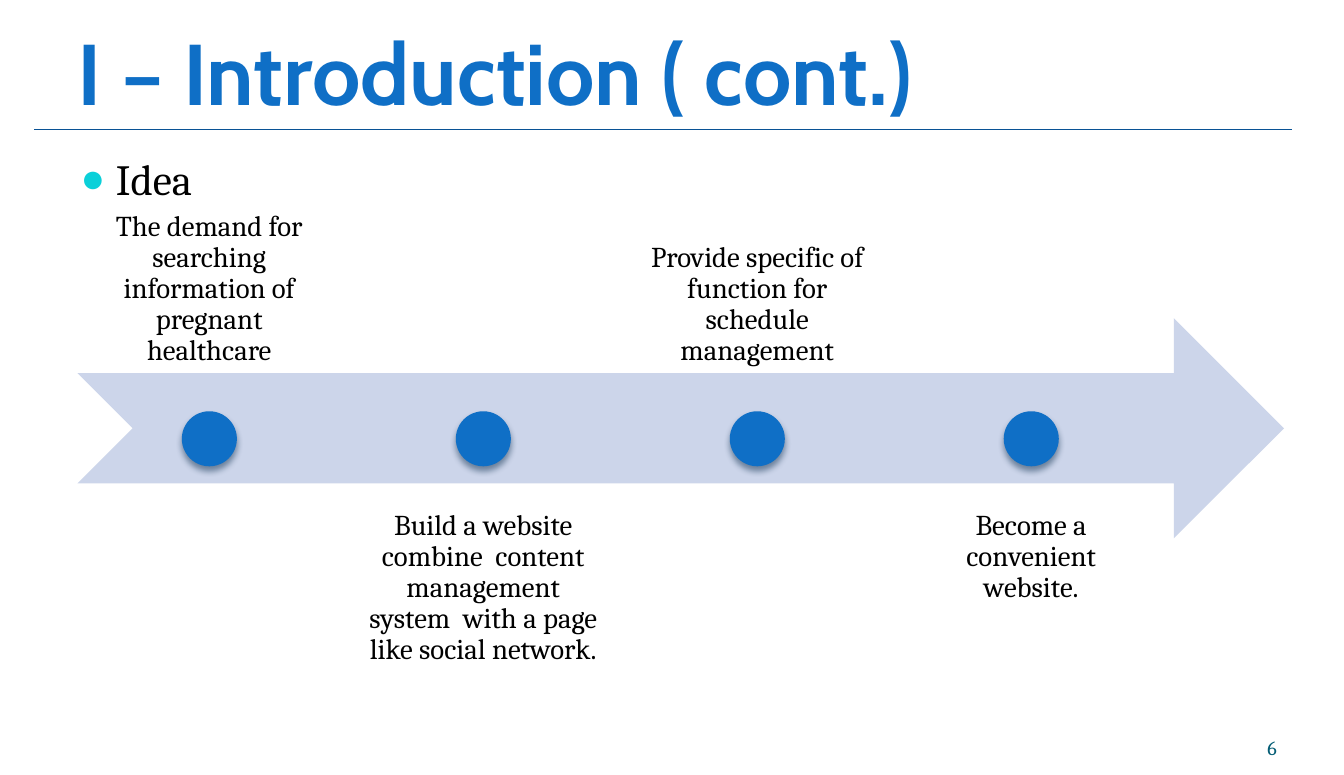
from lxml import etree
from pptx import Presentation
from pptx.dml.color import RGBColor
from pptx.enum.shapes import MSO_CONNECTOR, MSO_SHAPE
from pptx.enum.text import MSO_ANCHOR, PP_ALIGN
from pptx.oxml.ns import qn
from pptx.util import Inches, Pt

TOP, BOTTOM = MSO_ANCHOR.TOP, MSO_ANCHOR.BOTTOM
LEFT, CENTER, RIGHT = PP_ALIGN.LEFT, PP_ALIGN.CENTER, PP_ALIGN.RIGHT

TITLE = "I – Introduction ( cont.)"
TOPIC = "Idea"
PAGE_NUMBER = "6"
STEPS = [
    "The demand for searching information of pregnant healthcare",
    "Build a website combine  content management system  with a page like social network.",
    "Provide specific of function for schedule management",
    "Become a convenient website.",
]

THEME = {
    "title": {"name": "Cabin", "size": 60, "bold": True, "color": "0F6FC6"},
    "topic": {"name": "Cambria", "size": 30, "color": "000000"},
    "step": {"name": "Cambria", "size": 20, "color": "000000"},
    "number": {"name": "Cambria", "size": 14, "color": "045D75"},
    "rule": "095295",
    "bullet": "0BD0D9",
    "arrow": "CCD5EA",
    "dot": "0F6FC6",
    "shadow": "042747",
}

# Timeline grid, in inches
SLIDE_WIDTH, SLIDE_HEIGHT = 13, 7.5
ARROW_LEFT, ARROW_TOP, ARROW_WIDTH, ARROW_HEIGHT = 0.75, 3.08, 11.67, 2.13
ROW_HEIGHT = ARROW_HEIGHT
ROW_TOPS = (ARROW_TOP - 1.5, ARROW_TOP + 1.7)
COLUMN_LEFT, COLUMN_WIDTH, COLUMN_GAP = 0.76, 2.53, 0.12
DOT_SIZE = ROW_HEIGHT / 4
DOT_TOP = 3.98


def add_xml(parent, tag, **attributes):
    return etree.SubElement(
        parent, qn(tag), {key: str(value) for key, value in attributes.items()})


def add_text(page, text, area, style, align=LEFT, anchor=TOP, insets=(0, 0)):
    """Add a one-paragraph box; insets are (horizontal, vertical)."""
    box = page.shapes.add_textbox(*map(Inches, area))
    across, down = map(Inches, insets)
    frame_format = {
        "word_wrap": True, "vertical_anchor": anchor,
        "margin_left": across, "margin_right": across,
        "margin_top": down, "margin_bottom": down,
    }
    for name, value in frame_format.items():
        setattr(box.text_frame, name, value)
    para = box.text_frame.paragraphs[0]
    para.alignment = align
    span = para.add_run()
    span.text = text
    for name, value in THEME[style].items():
        if name == "color":
            span.font.color.rgb = RGBColor.from_string(value)
        else:
            setattr(span.font, name, Pt(value) if name == "size" else value)
    return para


def add_bullet(para):
    properties = para._p.get_or_add_pPr()
    properties.set("marL", str(Inches(0.34)))
    properties.set("indent", str(-Inches(0.34)))
    color = add_xml(properties, "a:buClr")
    add_xml(color, "a:srgbClr", val=THEME["bullet"])
    add_xml(properties, "a:buSzPct", val=95000)
    add_xml(properties, "a:buFont", typeface="Arial")
    add_xml(properties, "a:buChar", char="●")


def add_filled(page, preset, area, color):
    shape = page.shapes.add_shape(preset, *map(Inches, area))
    shape.shadow.inherit = False
    shape.fill.solid()
    shape.fill.fore_color.rgb = RGBColor.from_string(color)
    shape.line.fill.background()
    return shape


def add_drop_shadow(shape):
    effects = shape._element.spPr.find(qn("a:effectLst"))
    shadow = add_xml(effects, "a:outerShdw", blurRad=Pt(4.5), dist=Pt(3),
                     dir=90 * 60000, rotWithShape=0)
    color = add_xml(shadow, "a:srgbClr", val=THEME["shadow"])
    add_xml(color, "a:alpha", val=48000)


def add_header(page):
    add_text(page, TITLE, (0.75, 0, 11.7, 1.25), "title",
             anchor=BOTTOM, insets=(0, 0.06))
    rule = page.shapes.add_connector(
        MSO_CONNECTOR.STRAIGHT, *map(Inches, (0.33, 1.25, 12.5, 1.25)))
    rule.line.color.rgb = RGBColor.from_string(THEME["rule"])
    rule.line.width = Pt(0.75)
    add_xml(rule._element.spPr, "a:effectLst")


def add_timeline(page):
    add_filled(page, MSO_SHAPE.NOTCHED_RIGHT_ARROW,
               (ARROW_LEFT, ARROW_TOP, ARROW_WIDTH, ARROW_HEIGHT), THEME["arrow"])
    for index, text in enumerate(STEPS):
        left = COLUMN_LEFT + index * (COLUMN_WIDTH + COLUMN_GAP)
        row = index % 2
        para = add_text(page, text, (left, ROW_TOPS[row], COLUMN_WIDTH, ROW_HEIGHT),
                        "step", CENTER, (BOTTOM, TOP)[row], (0.16, 0.16))
        para.line_spacing = 0.9
        dot_left = left + (COLUMN_WIDTH - DOT_SIZE) / 2
        dot = add_filled(page, MSO_SHAPE.OVAL,
                         (dot_left, DOT_TOP, DOT_SIZE, DOT_SIZE), THEME["dot"])
        add_drop_shadow(dot)


def main():
    deck = Presentation()
    deck.slide_width, deck.slide_height = Inches(SLIDE_WIDTH), Inches(SLIDE_HEIGHT)
    page = deck.slides.add_slide(deck.slide_layouts[6])
    add_header(page)
    add_text(page, PAGE_NUMBER, (11.27, 6.95, 1.08, 0.4), "number", RIGHT, BOTTOM)
    topic = add_text(page, TOPIC, (0.67, 1.42, 11.7, 5.75), "topic",
                     insets=(0.11, 0.06))
    add_bullet(topic)
    add_timeline(page)
    deck.save("out.pptx")


if __name__ == "__main__":
    main()
